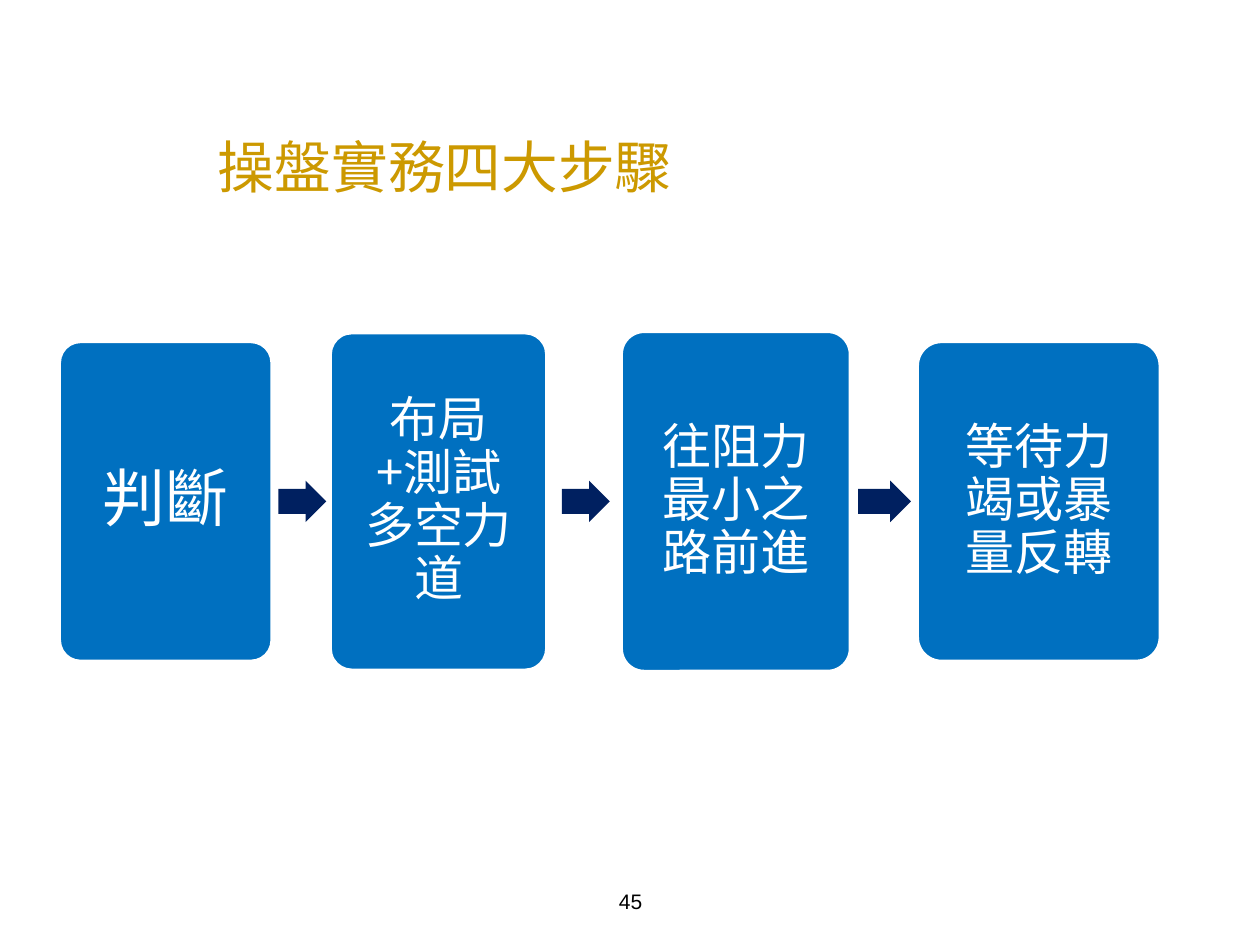
from lxml.etree import SubElement
from pptx import Presentation
from pptx.dml.color import RGBColor
from pptx.enum.shapes import MSO_SHAPE
from pptx.enum.text import MSO_ANCHOR, PP_ALIGN
from pptx.oxml.ns import qn
from pptx.util import Inches, Pt

TITLE = "操盤實務四大步驟"
PAGE_NUMBER = "45"
# text, left, width, height, font size, inset
STEPS = [
    ("判斷", 0.47, 1.69, 2.54, 36, 0.2),
    ("布局+測試多空力道", 2.62, 1.72, 2.68, 28, 0.17),
    ("往阻力最小之路前進", 4.93, 1.82, 2.7, 28, 0.17),
    ("等待力竭或暴量反轉", 7.28, 1.93, 2.54, 28, 0.17),
]
ARROWS = [(2.21, 0.38), (4.46, 0.38), (6.81, 0.42)]  # left, width
ARROW_HEIGHT = 0.33
ROW_CENTER = 3.98

GOLD = RGBColor(0xCC, 0x99, 0x00)
BLUE = RGBColor(0x00, 0x70, 0xC0)
NAVY = RGBColor(0x00, 0x20, 0x60)
WHITE = RGBColor(0xFF, 0xFF, 0xFF)
BLACK = RGBColor(0x00, 0x00, 0x00)
CJK_FONT = "Noto Sans CJK SC"


def write(shape, text, size, color, font_name, align, inset=None):
    frame = shape.text_frame
    frame.word_wrap = True
    frame.vertical_anchor = MSO_ANCHOR.MIDDLE
    if inset is not None:
        for side in ("left", "right", "top", "bottom"):
            setattr(frame, f"margin_{side}", Inches(inset))
    paragraph = frame.paragraphs[0]
    paragraph.alignment = align
    run = paragraph.add_run()
    run.text = text
    formats = {"size": Pt(size), "name": font_name, "bold": False}
    for attribute, value in formats.items():
        setattr(run.font, attribute, value)
    run.font.color.rgb = color
    east_asian = SubElement(run.font._element, qn("a:ea"))
    east_asian.set("typeface", font_name)
    return paragraph


def add_centered(slide, preset, left, width, height, fill, adjustments):
    """Add a filled shape centred vertically on the row of steps."""
    shape = slide.shapes.add_shape(
        preset, Inches(left), Inches(ROW_CENTER - height / 2),
        Inches(width), Inches(height))
    for index, value in enumerate(adjustments):
        shape.adjustments[index] = value
    shape.shadow.inherit = False
    shape.fill.solid()
    shape.fill.fore_color.rgb = fill
    shape.line.fill.background()
    return shape


def main():
    presentation = Presentation()
    presentation.slide_width = Inches(10)
    presentation.slide_height = Inches(7.5)
    slide = presentation.slides.add_slide(presentation.slide_layouts[5])

    title = slide.shapes.title
    title_place = {"left": 1.63, "top": 1.03, "width": 6.26, "height": 0.58}
    for attribute, value in title_place.items():
        setattr(title, attribute, Inches(value))
    write(title, TITLE, 32.4, GOLD, CJK_FONT, PP_ALIGN.LEFT)

    for text, left, width, height, size, inset in STEPS:
        card = add_centered(slide, MSO_SHAPE.ROUNDED_RECTANGLE,
                            left, width, height, BLUE, [0.1])
        card.line.color.rgb = WHITE
        card.line.width = Pt(2)
        paragraph = write(card, text, size, WHITE, CJK_FONT, PP_ALIGN.CENTER, inset)
        paragraph.line_spacing = 0.9

    for left, width in ARROWS:
        add_centered(slide, MSO_SHAPE.RIGHT_ARROW,
                     left, width, ARROW_HEIGHT, NAVY, [0.6, 0.5])

    page_number = slide.shapes.add_textbox(
        Inches(3.42), Inches(6.95), Inches(3.17), Inches(0.4))
    write(page_number, PAGE_NUMBER, 12, BLACK, "Arial", PP_ALIGN.CENTER)

    presentation.save("out.pptx")


if __name__ == "__main__":
    main()
